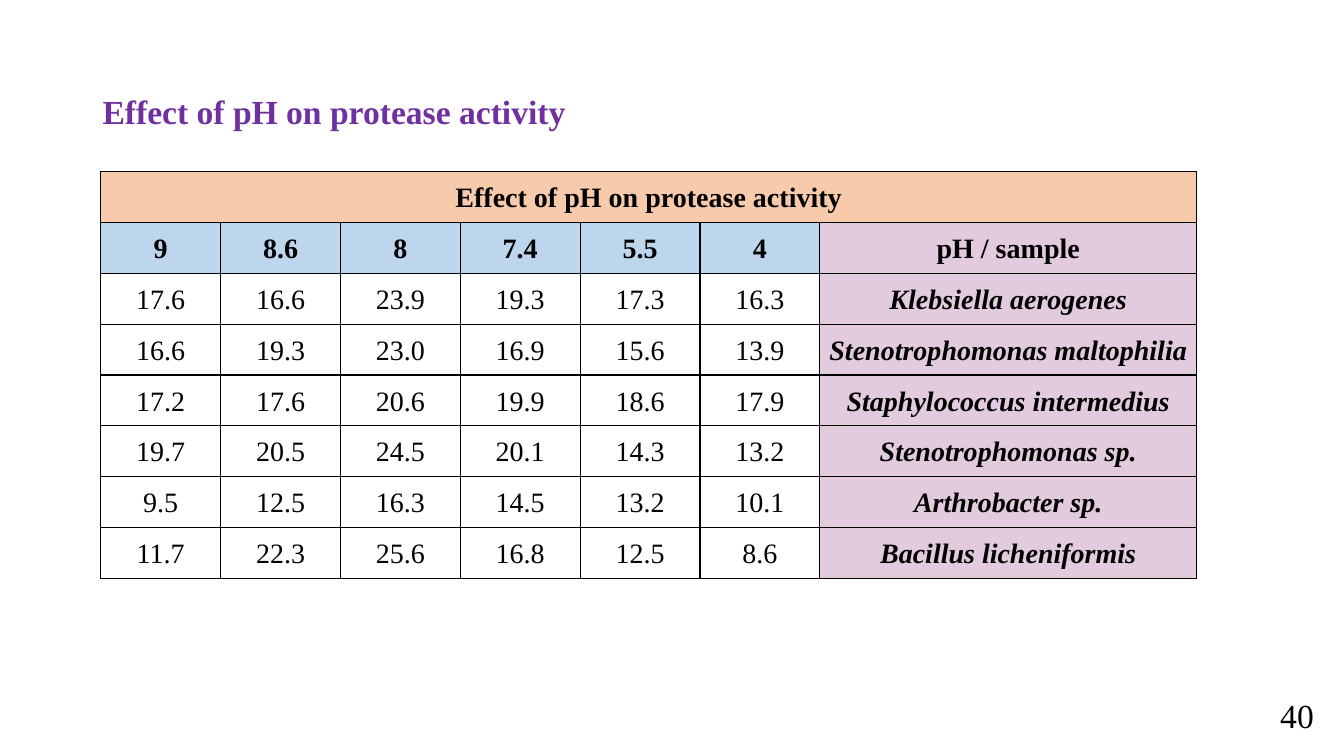
from lxml import etree
from pptx import Presentation
from pptx import util as u
from pptx.dml.color import RGBColor
from pptx.enum import text
from pptx.oxml import ns

COLORS = {
    "purple": "7030A0",
    "black": "000000",
    "white": "FFFFFF",
    "peach": "F7CAAC",
    "blue": "BDD6EE",
    "mauve": "E1CBDD",
}
HEADING = "Effect of pH on protease activity"
PH_LEVELS = ["9", "8.6", "8", "7.4", "5.5", "4"]
ACTIVITY = {
    "Klebsiella aerogenes": ["17.6", "16.6", "23.9", "19.3", "17.3", "16.3"],
    "Stenotrophomonas maltophilia": ["16.6", "19.3", "23.0", "16.9", "15.6", "13.9"],
    "Staphylococcus intermedius": ["17.2", "17.6", "20.6", "19.9", "18.6", "17.9"],
    "Stenotrophomonas sp.": ["19.7", "20.5", "24.5", "20.1", "14.3", "13.2"],
    "Arthrobacter sp.": ["9.5", "12.5", "16.3", "14.5", "13.2", "10.1"],
    "Bacillus licheniformis": ["11.7", "22.3", "25.6", "16.8", "12.5", "8.6"],
}


class SlideBuilder:
    """Holds the style and the current slide."""

    font = "Times New Roman"

    def __init__(self, page):
        self.page = page

    def style_text(self, frame, content, size, align, color="black", bold=False,
                   italic=False, spacing=1.0):
        frame.text = content
        para = frame.paragraphs[0]
        para.alignment = align
        para.line_spacing = spacing
        for span in para.runs:
            span.font.name = self.font
            span.font.size = u.Pt(size)
            span.font.bold = bold
            span.font.italic = italic
            span.font.color.rgb = RGBColor.from_string(COLORS[color])

    def title(self, content, left, top, width, height):
        box = self.page.shapes.title
        box.left, box.top = u.Cm(left), u.Cm(top)
        box.width, box.height = u.Cm(width), u.Cm(height)
        box.text_frame.vertical_anchor = text.MSO_ANCHOR.MIDDLE
        self.style_text(box.text_frame, content, 24, text.PP_ALIGN.LEFT,
                        color="purple", bold=True, spacing=0.9)

    def label(self, content, *place):
        box = self.page.shapes.add_textbox(*map(u.Cm, place))
        box.text_frame.word_wrap = True
        box.text_frame.vertical_anchor = text.MSO_ANCHOR.MIDDLE
        self.style_text(box.text_frame, content, 24, text.PP_ALIGN.RIGHT)

    def border(self, cell):
        properties = cell._tc.get_or_add_tcPr()
        for position, side in enumerate(("lnL", "lnR", "lnT", "lnB")):
            line = etree.Element(ns.qn(f"a:{side}"), w=str(u.Pt(1)))
            fill = etree.SubElement(line, ns.qn("a:solidFill"))
            etree.SubElement(fill, ns.qn("a:srgbClr"), val=COLORS["black"])
            properties.insert(position, line)

    def cell(self, cell, content, fill, bold, italic):
        cell.fill.solid()
        cell.fill.fore_color.rgb = RGBColor.from_string(COLORS[fill])
        cell.margin_left = cell.margin_right = u.Cm(0.18)
        cell.margin_top = cell.margin_bottom = 0
        cell.vertical_anchor = text.MSO_ANCHOR.MIDDLE
        self.style_text(cell.text_frame, content, 20, text.PP_ALIGN.CENTER,
                        bold=bold, italic=italic, spacing=1.07)
        self.border(cell)

    def table(self, rows, left, top, widths, row_height):
        frame = self.page.shapes.add_table(
            len(rows), len(widths), u.Cm(left), u.Cm(top),
            u.Cm(sum(widths)), u.Cm(row_height * len(rows)))
        table = frame.table
        table.first_row = table.horz_banding = False
        for column, width in zip(table.columns, widths):
            column.width = u.Cm(width)
        last = len(widths) - 1
        for r, values in enumerate(rows):
            table.rows[r].height = u.Cm(row_height)
            for c, value in enumerate(values):
                if r == 0:
                    fill = "peach"
                elif c == last:
                    fill = "mauve"
                else:
                    fill = "blue" if r == 1 else "white"
                self.cell(table.cell(r, c), value, fill,
                          bold=r < 2 or c == last, italic=r > 1 and c == last)
        table.cell(0, 0).merge(table.cell(0, last))


def main():
    deck = Presentation()
    deck.slide_width, deck.slide_height = u.Cm(33.87), u.Cm(19.05)
    page = deck.slides.add_slide(deck.slide_layouts[5])
    builder = SlideBuilder(page)

    # Title
    builder.title(HEADING, 2.33, 1.01, 29.21, 3.68)

    # Activity table: heading row, pH row, one row per sample
    rows = [[HEADING] + [""] * len(PH_LEVELS), PH_LEVELS + ["pH / sample"]]
    rows += [values + [sample] for sample, values in ACTIVITY.items()]
    widths = [3.02] * len(PH_LEVELS) + [9.5]
    builder.table(rows, 2.54, 4.33, widths, 1.28)

    # Page number
    builder.label("40", 31.73, 17.33, 1.63, 1.4)

    deck.save("out.pptx")


if __name__ == "__main__":
    main()
